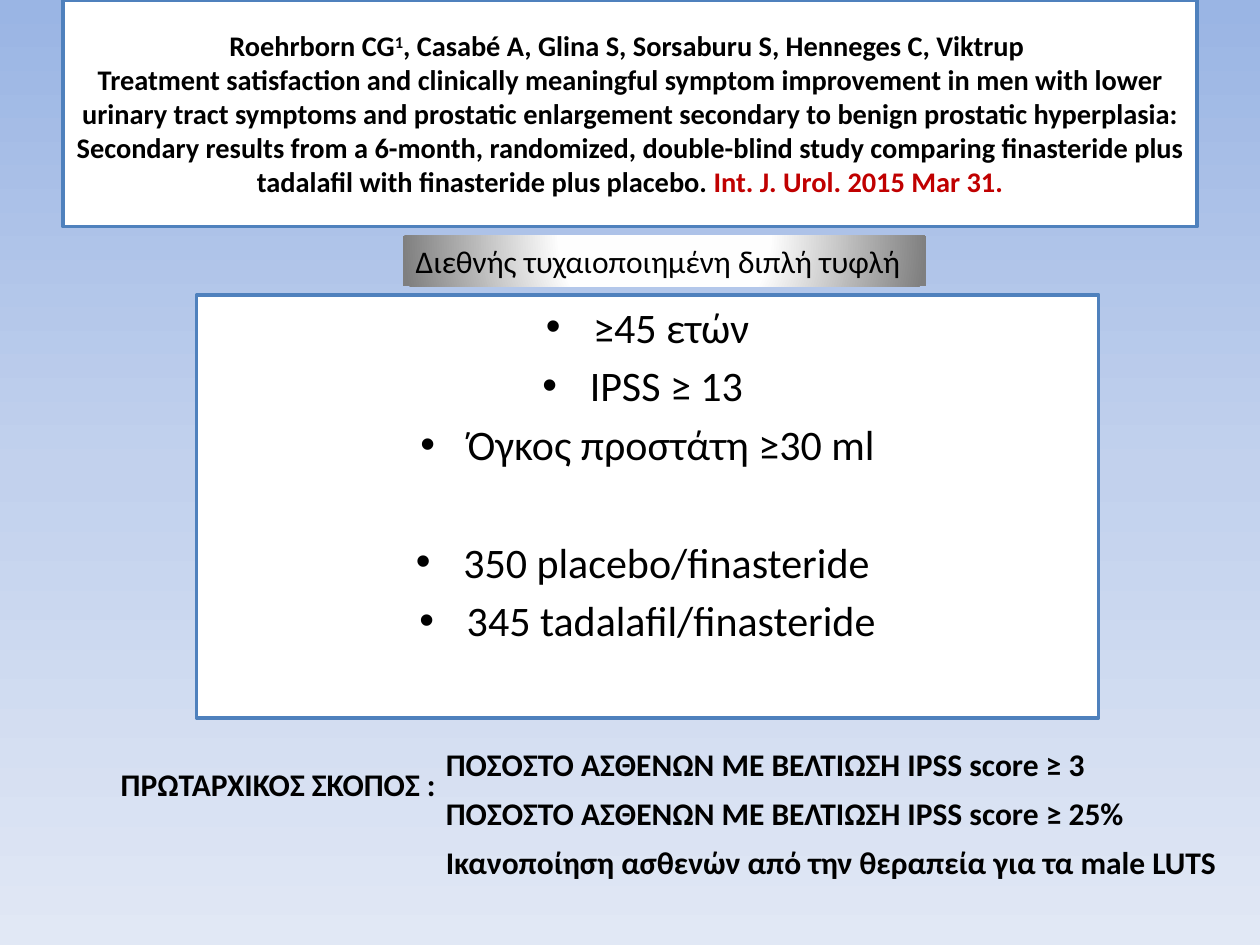
from typing import NamedTuple

from lxml import etree
from pptx import Presentation
from pptx.dml.color import RGBColor
from pptx.enum.shapes import MSO_SHAPE
from pptx.enum.text import MSO_ANCHOR, PP_ALIGN
from pptx.oxml import parse_xml
from pptx.oxml.ns import qn
from pptx.util import Pt

RECT = MSO_SHAPE.RECTANGLE
TOP, MIDDLE = MSO_ANCHOR.TOP, MSO_ANCHOR.MIDDLE
LEFT, CENTER = PP_ALIGN.LEFT, PP_ALIGN.CENTER

BLACK = RGBColor(0x00, 0x00, 0x00)
WHITE = RGBColor(0xFF, 0xFF, 0xFF)
RED = RGBColor(0xC0, 0x00, 0x00)
BLUE = RGBColor(0x4F, 0x81, 0xBD)
FONT = "Calibri"
NS = "http://schemas.openxmlformats.org/drawingml/2006/main"

BACKGROUND_STOPS = ((0, "9AB5E4"), (50, "C2D1ED"), (100, "E1E8F5"))
BANNER_STOPS = ((0, "FFFFFF"), (40, "FEFEFE"), (100, "7F7F7F"))
DOWNWARD = '<a:lin ang="5400000" scaled="0"/>'
RADIAL = ('<a:path path="circle"><a:fillToRect l="50000" t="-80000" '
          'r="50000" b="180000"/></a:path>')


class Box(NamedTuple):
    left: float
    top: float
    width: float
    height: float


class Label(NamedTuple):
    text: str
    box: Box


class Criterion(NamedTuple):
    text: str
    space_before: float = 4.8


GOAL_LEFT, GOAL_TOP, GOAL_STEP = 247.7, 421.9, 28.2
GOALS = (
    ("ΠΟΣΟΣΤΟ ΑΣΘΕΝΩΝ ΜΕ ΒΕΛΤΙΩΣΗ IPSS score ≥ 3", 383.8),
    ("ΠΟΣΟΣΤΟ ΑΣΘΕΝΩΝ ΜΕ ΒΕΛΤΙΩΣΗ IPSS score ≥ 25%", 416.2),
    ("Ικανοποίηση ασθενών από την θεραπεία για τα male LUTS", 458.6),
)
LABELS = [Label("ΠΡΩΤΑΡΧΙΚΟΣ ΣΚΟΠΟΣ :", Box(61.9, 433.4, 196.6, 29.1))] + [
    Label(text, Box(GOAL_LEFT, GOAL_TOP + i * GOAL_STEP, width, 29.1))
    for i, (text, width) in enumerate(GOALS)
]
CRITERIA = (
    Criterion("≥45 ετών", 0),
    Criterion("IPSS ≥ 13 "),
    Criterion("Όγκος προστάτη ≥30 ml"),
    Criterion("350 placebo/finasteride ", 38.4),
    Criterion("345 tadalafil/finasteride"),
)
AUTHORS = ", Casabé A, Glina S, Sorsaburu S, Henneges C, Viktrup "
ARTICLE = (
    "Treatment satisfaction and clinically meaningful symptom improvement in "
    "men with lower urinary tract symptoms and prostatic enlargement secondary "
    "to benign prostatic hyperplasia: Secondary results from a 6-month, "
    "randomized, double-blind study comparing finasteride plus tadalafil with "
    "finasteride plus placebo. "
)


def add_text(p, text: str, *, size: float = 18, color: RGBColor = BLACK,
             bold: bool = False, baseline: int = 0) -> None:
    r = p.add_run()
    r.text = text
    r.font.name, r.font.size, r.font.bold = FONT, Pt(size), bold
    r.font.color.rgb = color
    if baseline:
        r.font._element.set("baseline", str(baseline * 1000))


def set_gradient(fill, parent, stops, direction: str) -> None:
    fill.gradient()
    old = parent.find(qn("a:gradFill"))
    colors = "".join(f'<a:gs pos="{pos * 1000}"><a:srgbClr val="{rgb}"/></a:gs>'
                     for pos, rgb in stops)
    new = parse_xml(f'<a:gradFill xmlns:a="{NS}" rotWithShape="1">'
                    f'<a:gsLst>{colors}</a:gsLst>{direction}</a:gradFill>')
    parent.replace(old, new)


def add_panel(s, box: Box, anchor, align, wrap: bool = True):
    sp = s.shapes.add_shape(RECT, *map(Pt, box))
    sp.shadow.inherit = False
    sp.fill.solid()
    sp.fill.fore_color.rgb = WHITE
    sp.line.color.rgb = BLUE
    sp.line.width = Pt(2)
    tf = sp.text_frame
    tf.word_wrap, tf.vertical_anchor = wrap, anchor
    tf.paragraphs[0].alignment = align
    return sp


def add_citation(s) -> None:
    sp = add_panel(s, Box(36, 0, 648, 129.6), MIDDLE, CENTER)
    p = sp.text_frame.paragraphs[0]
    style = {"size": 16.2, "bold": True}
    add_text(p, "Roehrborn CG", **style)
    add_text(p, "1", baseline=30, **style)
    add_text(p, AUTHORS, **style)
    p.add_line_break()
    add_text(p, ARTICLE, **style)
    add_text(p, "Int. J. Urol. 2015 Mar 31.", color=RED, **style)


def add_criteria(s) -> None:
    tf = add_panel(s, Box(112.3, 168.5, 515.5, 241.9), TOP, CENTER).text_frame
    for i, item in enumerate(CRITERIA):
        p = tf.add_paragraph() if i else tf.paragraphs[0]
        p.alignment = CENTER
        pPr = p._p.get_or_add_pPr()
        pPr.set("marL", str(Pt(27)))
        pPr.set("indent", str(-Pt(27)))
        p.space_before = Pt(item.space_before)
        etree.SubElement(pPr, qn("a:buFont"), typeface="Arial")
        etree.SubElement(pPr, qn("a:buChar"), char="•")
        add_text(p, item.text, size=24)


def add_banner(s) -> None:
    sp = add_panel(s, Box(230.4, 134.6, 298.8, 29.1), TOP, LEFT, wrap=False)
    sp.line.fill.background()
    set_gradient(sp.fill, sp._element.spPr, BANNER_STOPS, RADIAL)
    add_text(sp.text_frame.paragraphs[0], "Διεθνής τυχαιοποιημένη διπλή τυφλή")


def add_label(s, label: Label) -> None:
    tf = s.shapes.add_textbox(*map(Pt, label.box)).text_frame
    tf.word_wrap = False
    add_text(tf.paragraphs[0], label.text, bold=True)


def main() -> None:
    prs = Presentation()
    prs.slide_width, prs.slide_height = Pt(720), Pt(540)
    s = prs.slides.add_slide(prs.slide_layouts[6])
    fill = s.background.fill
    fill.gradient()
    set_gradient(fill, s._element.cSld.find(qn("p:bg")).find(qn("p:bgPr")),
                 BACKGROUND_STOPS, DOWNWARD)
    add_citation(s)
    add_criteria(s)
    add_banner(s)
    for label in LABELS:
        add_label(s, label)
    prs.save("out.pptx")


if __name__ == "__main__":
    main()
